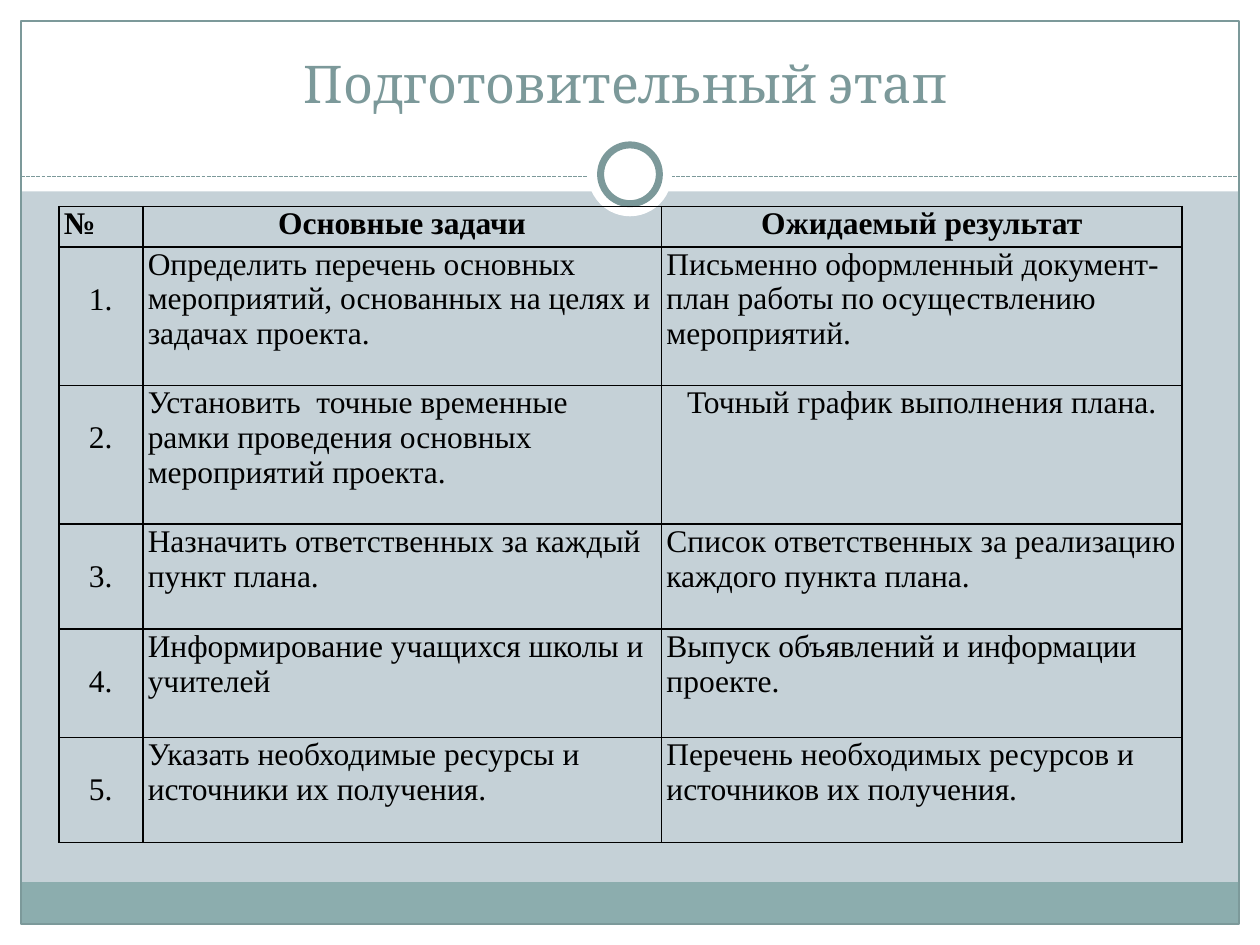
from lxml.etree import SubElement
from pptx import Presentation
from pptx.dml.color import RGBColor
from pptx.enum.dml import MSO_LINE_DASH_STYLE as DASH
from pptx.enum.shapes import MSO_CONNECTOR, MSO_SHAPE
from pptx.enum.text import MSO_ANCHOR, PP_ALIGN
from pptx.oxml.ns import qn
from pptx.util import Inches, Pt

WHITE = RGBColor(0xFF, 0xFF, 0xFF)
BLACK = RGBColor(0x00, 0x00, 0x00)
MIST = RGBColor(0xC5, 0xD1, 0xD7)
TEAL = RGBColor(0x8C, 0xAD, 0xAE)
SAGE = RGBColor(0x7C, 0x99, 0x9A)

COLS, ROWS = 60, 45
HEADER = ["№", "Основные задачи", "Ожидаемый результат"]
STEPS = [
    ("Определить перечень основных мероприятий, основанных на целях и задачах проекта.",
     "Письменно оформленный документ-план работы по осуществлению мероприятий."),
    ("Установить  точные временные рамки проведения основных мероприятий проекта.",
     "Точный график выполнения плана."),
    ("Назначить ответственных за каждый пункт плана.",
     "Список ответственных за реализацию каждого пункта плана."),
    ("Информирование учащихся школы и учителей",
     "Выпуск объявлений и информации проекте."),
    ("Указать необходимые ресурсы и источники их получения.",
     "Перечень необходимых ресурсов и источников их получения."),
]


def write(tf, text, font="Times New Roman", size=18, color=BLACK, bold=False,
          align=PP_ALIGN.LEFT):
    p = tf.paragraphs[0]
    p.alignment = align
    r = p.add_run()
    r.text = text
    r.font.name = font
    r.font.size = Pt(size)
    r.font.bold = bold
    r.font.color.rgb = color


class Deck:
    def __init__(self):
        self.prs = Presentation()
        self.prs.slide_width, self.prs.slide_height = Inches(10), Inches(7.5)
        self.s = self.prs.slides.add_slide(self.prs.slide_layouts[6])
        self.s.background.fill.solid()
        self.s.background.fill.fore_color.rgb = MIST

    def x(self, n):
        return round(self.prs.slide_width * n / COLS)

    def y(self, n):
        return round(self.prs.slide_height * n / ROWS)

    def box(self, col, row, width, height):
        return self.x(col), self.y(row), self.x(width), self.y(height)

    def shape(self, *box, kind=MSO_SHAPE.RECTANGLE, fill=None, line=None, weight=0.75):
        sp = self.s.shapes.add_shape(kind, *self.box(*box))
        sp.shadow.inherit = False
        if fill is None:
            sp.fill.background()
        else:
            sp.fill.solid()
            sp.fill.fore_color.rgb = fill
        if line is None:
            sp.line.fill.background()
        else:
            sp.line.color.rgb = line
            sp.line.width = Pt(weight)

    def circle(self, col, row, size, **style):
        self.shape(col - size / 2, row - size / 2, size, size, kind=MSO_SHAPE.OVAL, **style)

    def dashed_line(self, left, right, row):
        line = self.s.shapes.add_connector(
            MSO_CONNECTOR.STRAIGHT, self.x(left), self.y(row), self.x(right), self.y(row))
        line.line.color.rgb = SAGE
        line.line.width = Pt(0.75)
        line.line.dash_style = DASH.SQUARE_DOT
        SubElement(line._element.spPr, qn("a:effectLst"))

    def title(self, *box, text):
        tf = self.s.shapes.add_textbox(*self.box(*box)).text_frame
        tf.word_wrap = True
        tf.vertical_anchor = MSO_ANCHOR.BOTTOM
        write(tf, text, font="Cambria", size=29.7, color=SAGE, align=PP_ALIGN.CENTER)

    def borders(self, cell):
        tc_pr = cell._tc.get_or_add_tcPr()
        for i, side in enumerate(("a:lnL", "a:lnR", "a:lnT", "a:lnB")):
            ln = tc_pr.makeelement(qn(side), {"w": str(Pt(1))})
            fill = SubElement(ln, qn("a:solidFill"))
            SubElement(fill, qn("a:srgbClr"), val=str(BLACK))
            tc_pr.insert(i, ln)

    def cell(self, cell, text, top=0, **style):
        cell.margin_left = cell.margin_right = Inches(0.04)
        cell.margin_top, cell.margin_bottom = Inches(top), 0
        cell.fill.background()
        self.borders(cell)
        write(cell.text_frame, text, **style)

    def table(self, col, row, widths, heights):
        box = self.box(col, row, sum(widths), sum(heights))
        table = self.s.shapes.add_table(len(heights), len(widths), *box).table
        table.first_row = table.horz_banding = False
        for column, width in zip(table.columns, widths):
            column.width = self.x(width)
        for line, height in zip(table.rows, heights):
            line.height = self.y(height)
        return table


def main():
    deck = Deck()
    for box in ((0, 44, 60, 1), (0, 0, 60, 9.12), (0, 0, 1, 45), (59, 0, 1, 45)):
        deck.shape(*box, fill=WHITE)
    deck.shape(1, 42, 58, 2, fill=TEAL)
    deck.shape(1, 1, 58, 43, line=SAGE)
    deck.dashed_line(1, 59, 8.4)
    deck.circle(30, 8.3, 4, fill=WHITE)
    deck.circle(30, 8.3, 2.8, fill=WHITE, line=SAGE, weight=4)
    deck.title(2.8, 1.8, 54, 3.9, text="Подготовительный этап")

    table = deck.table(2.8, 9.84, (4, 24.7, 24.8), (1.92, 6.6, 6.6, 5, 5.16, 5))
    for j, text in enumerate(HEADER):
        align = PP_ALIGN.CENTER if j else PP_ALIGN.LEFT
        deck.cell(table.cell(0, j), text, bold=True, align=align)
    for i, (task, result) in enumerate(STEPS, 1):
        deck.cell(table.cell(i, 0), f"{i}.", top=0.28, align=PP_ALIGN.CENTER)
        deck.cell(table.cell(i, 1), task)
        align = PP_ALIGN.CENTER if i == 2 else PP_ALIGN.LEFT
        deck.cell(table.cell(i, 2), result, align=align)
    deck.prs.save("out.pptx")


if __name__ == "__main__":
    main()
